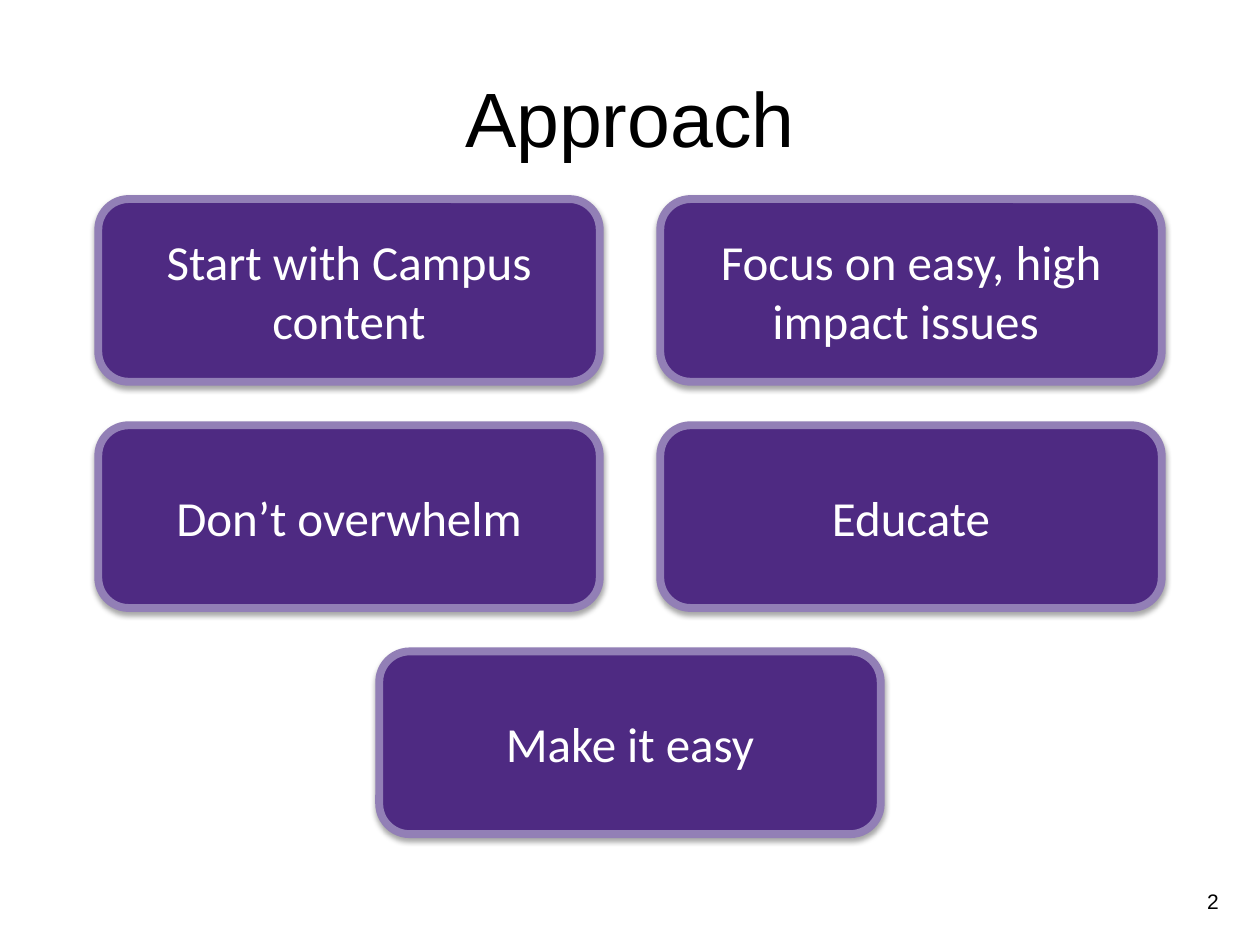
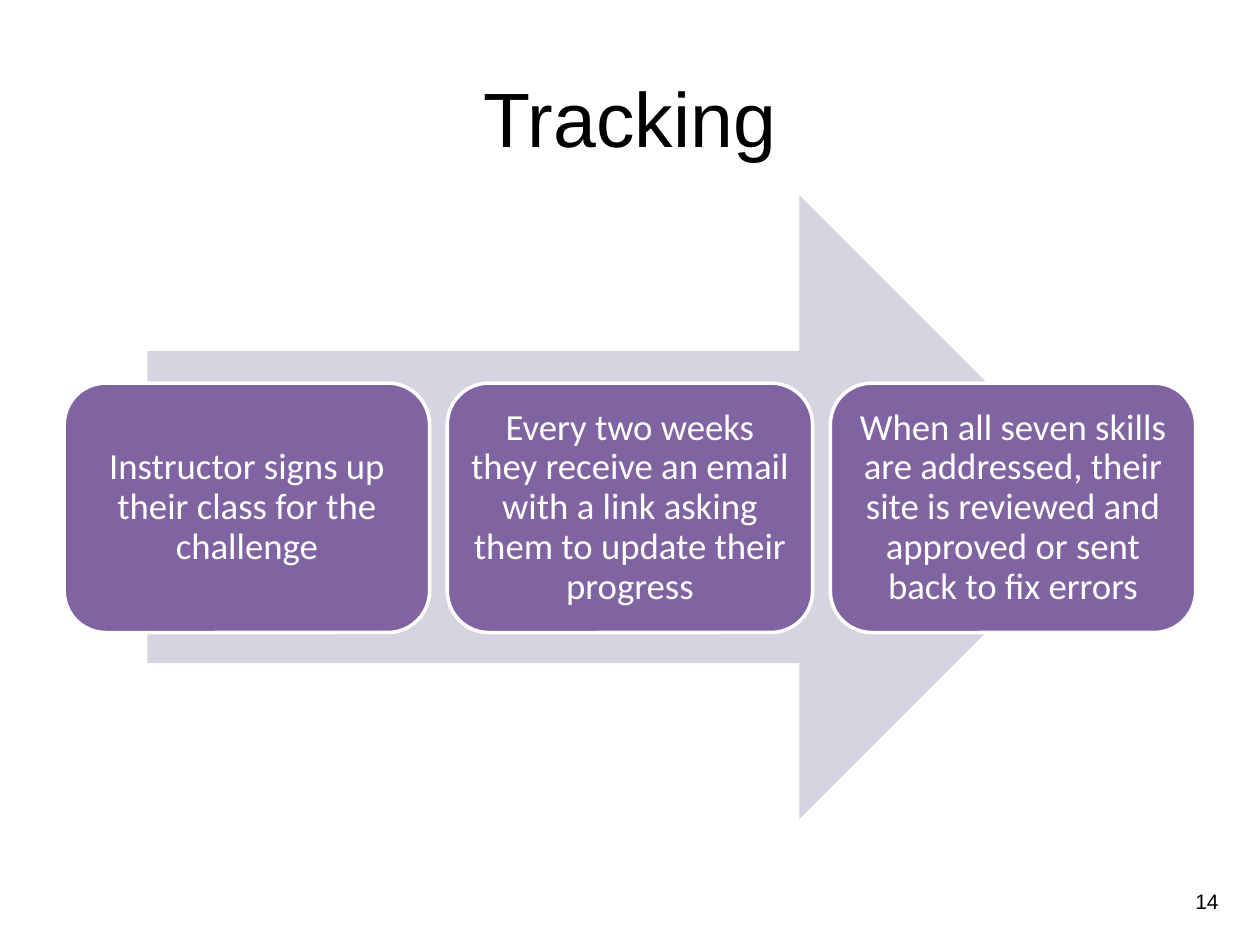
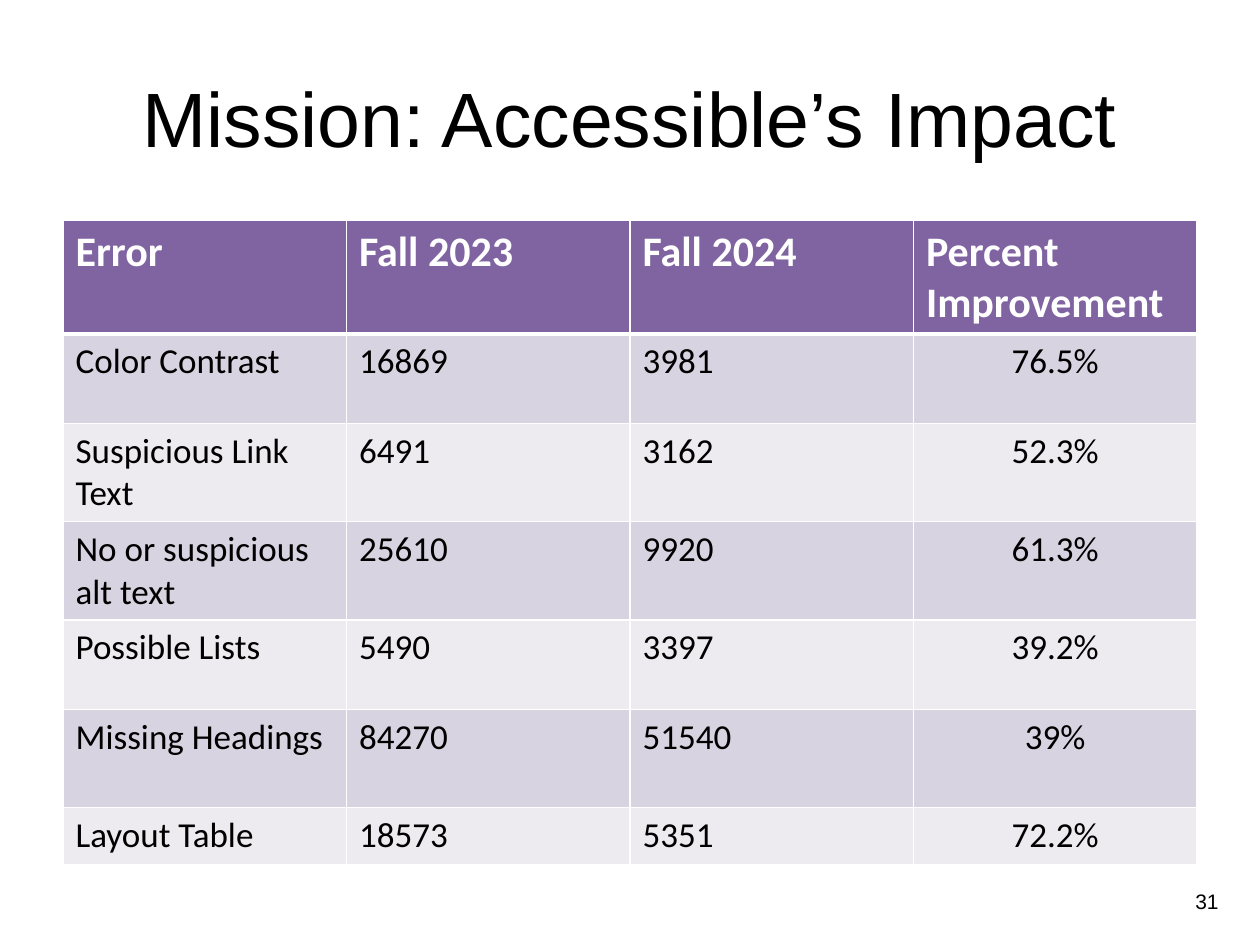
from dataclasses import dataclass

from lxml import etree
from pptx import Presentation
from pptx.dml.color import RGBColor
from pptx.enum.shapes import MSO_SHAPE
from pptx.enum.text import MSO_ANCHOR, PP_ALIGN
from pptx.oxml.ns import qn
from pptx.util import Inches, Pt

ROUNDED = MSO_SHAPE.ROUNDED_RECTANGLE
RIGHT_ARROW = MSO_SHAPE.RIGHT_ARROW
MIDDLE = MSO_ANCHOR.MIDDLE
LEFT, CENTER, RIGHT = PP_ALIGN.LEFT, PP_ALIGN.CENTER, PP_ALIGN.RIGHT
TITLE_ONLY = 5


@dataclass(frozen=True)
class Theme:
    heading_font: str = "Arial"
    body_font: str = "Calibri"
    black: str = "000000"
    white: str = "FFFFFF"
    deep_purple: str = "4E2A82"
    soft_purple: str = "927FB6"
    purple: str = "8064A2"
    lilac: str = "D8D3E0"
    pale_lilac: str = "EDEAF0"
    title_size: float = 44
    card_size: float = 28
    step_size: float = 21
    header_size: float = 24
    cell_size: float = 20
    number_size: float = 12


THEME = Theme()

PRINCIPLES = [
    ["Start with Campus content", "Focus on easy, high impact issues "],
    ["Don’t overwhelm", "Educate"],
    ["Make it easy"],
]
STEPS = [
    "Instructor signs up their class for the challenge",
    "Every two weeks they receive an email with a link asking them to "
    "update their progress",
    "When all seven skills are addressed, their site is reviewed and "
    "approved or sent back to fix errors",
]
IMPACT = [
    ["Error", "Fall 2023", "Fall 2024", "Percent Improvement"],
    ["Color Contrast", "16869", "3981", "76.5%"],
    ["Suspicious Link Text", "6491", "3162", "52.3%"],
    ["No or suspicious alt text", "25610", "9920", "61.3%"],
    ["Possible Lists", "5490", "3397", "39.2%"],
    ["Missing Headings", "84270", "51540", "39%"],
    ["Layout Table", "18573", "5351", "72.2%"],
]
IMPACT_ROW_HEIGHTS = [0.9, 0.71, 0.78, 0.78, 0.71, 0.78, 0.45]


def place(left, top, width, height):
    return [Inches(value) for value in (left, top, width, height)]


# Text
def write(frame, text, size, color, font=THEME.body_font, align=CENTER, bold=False):
    para = frame.paragraphs[0]
    para.alignment = align
    span = para.add_run()
    span.text = text
    span.font.name = font
    span.font.size = Pt(size)
    span.font.bold = bold
    span.font.color.rgb = RGBColor.from_string(color)
    return para


# Shared parts: title and page number
def add_page(deck, title, number):
    page = deck.slides.add_slide(deck.slide_layouts[TITLE_ONLY])
    heading = page.shapes.title
    heading.left, heading.top, heading.width, heading.height = place(0.5, 0.3, 9, 1.25)
    heading.text_frame.vertical_anchor = MIDDLE
    write(heading.text_frame, title, THEME.title_size, THEME.black, THEME.heading_font)

    box = page.shapes.add_textbox(*place(9.12, 6.95, 0.65, 0.4))
    box.text_frame.word_wrap = True
    box.text_frame.vertical_anchor = MIDDLE
    write(box.text_frame, str(number), THEME.number_size, THEME.black,
          THEME.heading_font, RIGHT)
    return page


# Shapes
def add_block(page, kind, area, fill, line=None, line_width=0):
    block = page.shapes.add_shape(kind, *place(*area))
    block.shadow.inherit = False
    block.fill.solid()
    block.fill.fore_color.rgb = RGBColor.from_string(fill)
    if line:
        block.line.color.rgb = RGBColor.from_string(line)
        block.line.width = Pt(line_width)
    else:
        block.line.fill.background()
    block.text_frame.word_wrap = True
    block.text_frame.vertical_anchor = MIDDLE
    return block


def add_drop_shadow(block):
    effects = block._element.spPr.find(qn("a:effectLst"))
    shadow = etree.SubElement(effects, qn("a:outerShdw"), blurRad=str(Pt(3.1)),
                              dist=str(Pt(1.8)), dir="5400000", rotWithShape="0")
    color = etree.SubElement(shadow, qn("a:srgbClr"), val=THEME.black)
    etree.SubElement(color, qn("a:alpha"), val="35000")


def add_card(page, text, left, top, width, height):
    card = add_block(page, ROUNDED, (left, top, width, height),
                     THEME.deep_purple, THEME.soft_purple, 4.5)
    add_drop_shadow(card)
    write(card.text_frame, text, THEME.card_size, THEME.white)


def add_step(page, text, left, top, width, height):
    step = add_block(page, ROUNDED, (left, top, width, height),
                     THEME.purple, THEME.white, 2)
    frame = step.text_frame
    frame.margin_left = frame.margin_right = Inches(0.09)
    frame.margin_top = frame.margin_bottom = Inches(0.09)
    write(frame, text, THEME.step_size, THEME.white).line_spacing = 0.9


# Table
def set_borders(cell, top, bottom):
    properties = cell._tc.get_or_add_tcPr()
    sides = {"a:lnL": 1, "a:lnR": 1, "a:lnT": top, "a:lnB": bottom}
    for position, (side, width) in enumerate(sides.items()):
        line = etree.Element(qn(side), w=str(Pt(width)))
        fill = etree.SubElement(line, qn("a:solidFill"))
        etree.SubElement(fill, qn("a:srgbClr"), val=THEME.white)
        properties.insert(position, line)


def add_impact_table(page, rows, heights, left, top, width):
    columns = len(rows[0])
    area = place(left, top, width, sum(heights))
    table = page.shapes.add_table(len(rows), columns, *area).table
    for column in table.columns:
        column.width = Inches(width / columns)
    for r, (values, height) in enumerate(zip(rows, heights)):
        table.rows[r].height = Inches(height)
        header = r == 0
        band = THEME.lilac if r % 2 else THEME.pale_lilac
        for c, value in enumerate(values):
            cell = table.cell(r, c)
            cell.fill.solid()
            cell.fill.fore_color.rgb = RGBColor.from_string(THEME.purple if header else band)
            set_borders(cell, 3 if r == 1 else 1, 3 if header else 1)
            centered = c == columns - 1 and not header
            write(cell.text_frame, value,
                  THEME.header_size if header else THEME.cell_size,
                  THEME.white if header else THEME.black,
                  align=CENTER if centered else LEFT, bold=header)


# Slides
def build_approach(deck):
    page = add_page(deck, "Approach", 2)
    width, height, gap, pitch = 3.98, 1.45, 0.48, 1.795
    for r, texts in enumerate(PRINCIPLES):
        row_width = len(texts) * (width + gap) - gap
        for c, text in enumerate(texts):
            left = (10 - row_width) / 2 + c * (width + gap)
            add_card(page, text, left, 1.58 + r * pitch, width, height)


def build_tracking(deck):
    page = add_page(deck, "Tracking", 14)
    add_block(page, RIGHT_ARROW, (1.17, 1.55, 7.65, 4.95), THEME.lilac)
    for c, text in enumerate(STEPS):
        add_step(page, text, 0.51 + c * 3.04, 3.04, 2.9, 1.98)


def build_impact(deck):
    page = add_page(deck, "Mission: Accessible’s Impact", 31)
    add_impact_table(page, IMPACT, IMPACT_ROW_HEIGHTS, 0.5, 1.75, 9)


def main():
    deck = Presentation()
    deck.slide_width, deck.slide_height = Inches(10), Inches(7.5)
    build_approach(deck)
    build_tracking(deck)
    build_impact(deck)
    deck.save("out.pptx")


if __name__ == "__main__":
    main()
